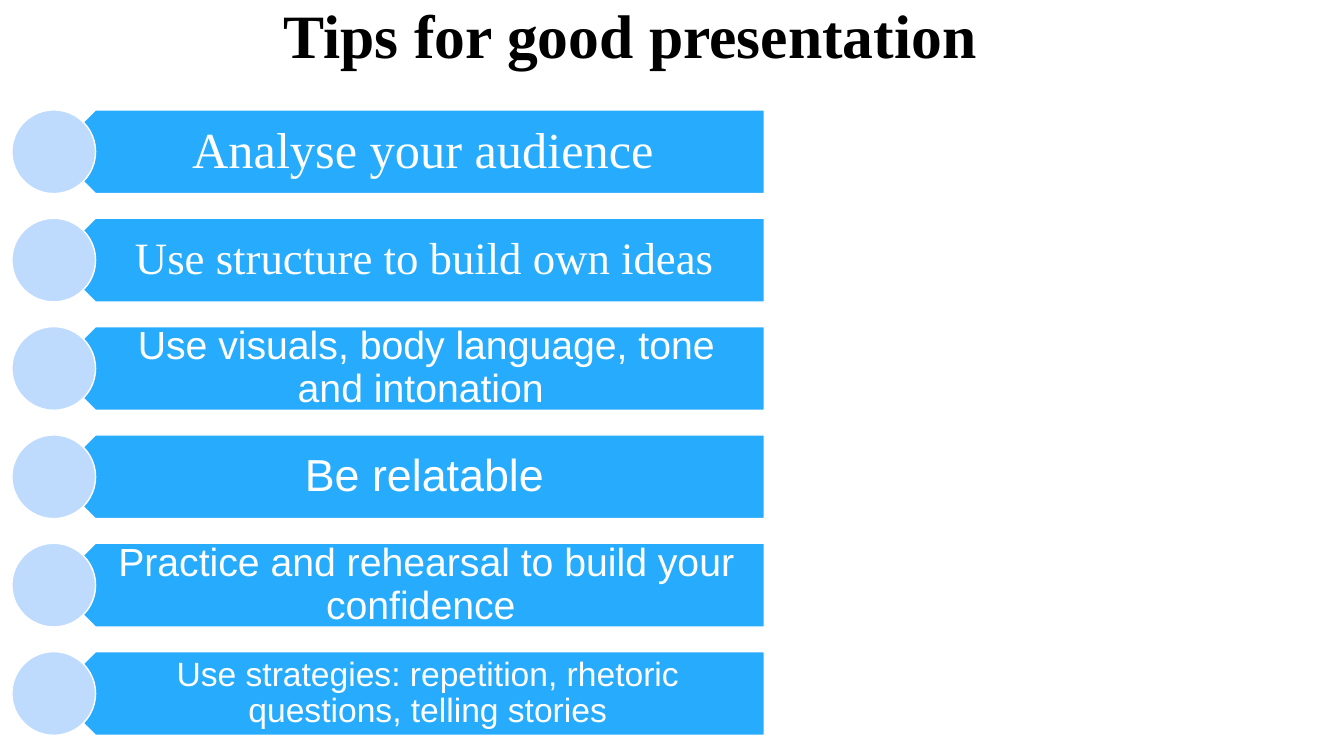
from pptx import Presentation
from pptx.dml.color import RGBColor
from pptx.enum.shapes import MSO_SHAPE
from pptx.enum.text import MSO_ANCHOR, MSO_AUTO_SIZE, PP_ALIGN
from pptx.util import Cm, Pt

PENTAGON, OVAL = MSO_SHAPE.PENTAGON, MSO_SHAPE.OVAL
TOP, MIDDLE = MSO_ANCHOR.TOP, MSO_ANCHOR.MIDDLE
CENTER, NO_FIT = PP_ALIGN.CENTER, MSO_AUTO_SIZE.NONE

THEME = {
    "title": RGBColor(0x00, 0x00, 0x00),
    "bar": RGBColor(0x27, 0xAC, 0xFD),
    "disc": RGBColor(0xBE, 0xDB, 0xFE),
    "light": RGBColor(0xFF, 0xFF, 0xFF),
    "serif": "Times New Roman",
    "sans": "Arial",
    "title_size": 44,
    "huge": 36,
    "large": 32,
    "medium": 28,
    "small": 24,
}

TIPS = [
    ("Analyse your audience", "serif", "huge"),
    ("Use structure to build own ideas", "serif", "large"),
    ("Use visuals, body language, tone and intonation ", "sans", "medium"),
    ("Be relatable", "sans", "large"),
    ("Practice and rehearsal to build your confidence ", "sans", "medium"),
    ("Use strategies: repetition, rhetoric questions, telling stories", "sans", "small"),
]

FIRST_TOP, PITCH, HEIGHT = 2.77, 2.73, 2.11
DISC_LEFT, BAR_LEFT, BAR_WIDTH = 0.3, 1.35, 17.91
LABEL_LEFT, LABEL_WIDTH = 1.88, 17.37


def write(frame, words, frame_format, font_format):
    for name, value in frame_format.items():
        setattr(frame, name, value)
    frame.text = words
    line = frame.paragraphs[0]
    for name, value in {"alignment": CENTER, "line_spacing": 0.9, "space_before": Pt(0)}.items():
        setattr(line, name, value)
    font = line.runs[0].font
    font.color.rgb = font_format["color"]
    for name in ("name", "size", "bold"):
        setattr(font, name, font_format[name])


def add_plain(shapes, kind, left, top, width, color):
    piece = shapes.add_shape(kind, Cm(left), Cm(top), Cm(width), Cm(HEIGHT))
    piece.shadow.inherit = False
    piece.fill.solid()
    piece.fill.fore_color.rgb = color
    piece.line.color.rgb = THEME["light"]
    piece.line.width = Pt(1)
    return piece


deck = Presentation()
deck.slide_width, deck.slide_height = Cm(33.87), Cm(19.05)
slide = deck.slides.add_slide(deck.slide_layouts[5])

title = slide.shapes.title
title_box = {"left": Cm(0), "top": Cm(0), "width": Cm(32.16), "height": Cm(3.4)}
for name, value in title_box.items():
    setattr(title, name, value)
write(
    title.text_frame,
    "Tips for good presentation ",
    {"word_wrap": True, "auto_size": NO_FIT, "vertical_anchor": TOP},
    {"name": THEME["serif"], "size": Pt(THEME["title_size"]), "bold": True,
     "color": THEME["title"]},
)

tip_list = slide.shapes.add_group_shape().shapes
for row, (tip, face, step) in enumerate(TIPS):
    top = FIRST_TOP + row * PITCH
    size = THEME[step]

    bar = add_plain(tip_list, PENTAGON, BAR_LEFT, top, BAR_WIDTH, THEME["bar"])
    bar.rotation = 180

    label = tip_list.add_textbox(Cm(LABEL_LEFT), Cm(top), Cm(LABEL_WIDTH), Cm(HEIGHT))
    # The insets grow with the type size
    write(
        label.text_frame,
        tip,
        {"word_wrap": True, "auto_size": NO_FIT, "vertical_anchor": MIDDLE,
         "margin_left": Cm(0.91), "margin_right": Cm(0.02 * size),
         "margin_top": Cm(0.01 * size), "margin_bottom": Cm(0.01 * size)},
        {"name": THEME[face], "size": Pt(size), "bold": False, "color": THEME["light"]},
    )

    add_plain(tip_list, OVAL, DISC_LEFT, top, HEIGHT, THEME["disc"])

deck.save("out.pptx")
